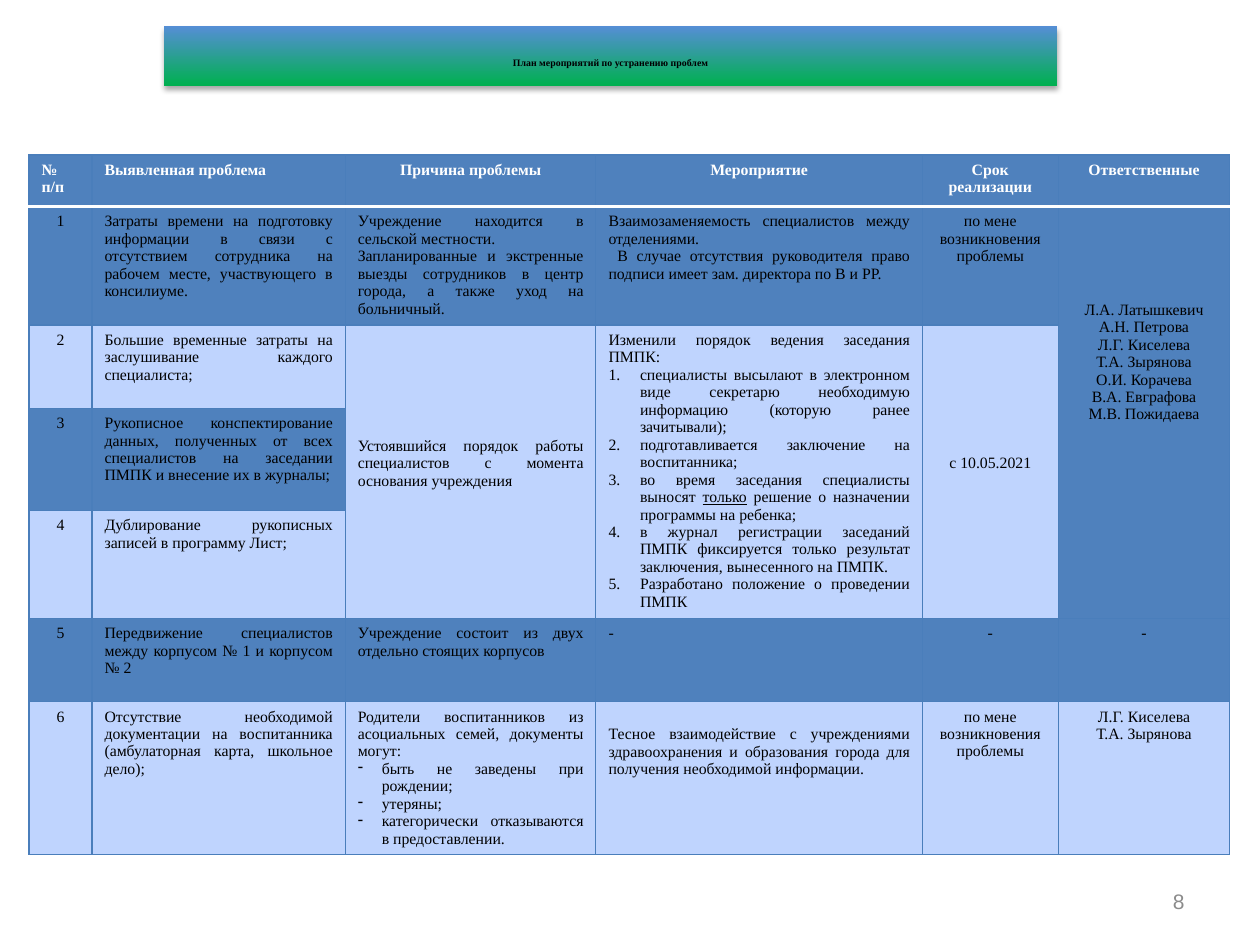
from lxml.etree import SubElement
from pptx import Presentation
from pptx.dml.color import RGBColor
from pptx.enum.text import MSO_ANCHOR, PP_ALIGN
from pptx.oxml import parse_xml
from pptx.oxml.ns import nsdecls, qn
from pptx.util import Inches, Pt

SERIF = "Times New Roman"
BLUE, PALE, GRID = "4F81BD", "BFD4FE", "4A7EBB"
LEFT, CENTER, JUSTIFY = PP_ALIGN.LEFT, PP_ALIGN.CENTER, PP_ALIGN.JUSTIFY
TITLE = "План мероприятий по устранению проблем"
PAGE = "8"

# "1. " and "- " open list items, "> " an indented line, underscores enclose underlined words;
# None continues the cell above.
ROWS = [
    ["№\nп/п", "Выявленная проблема", "Причина проблемы", "Мероприятие",
     "Срок реализации", "Ответственные"],
    ["1",
     "Затраты времени на подготовку информации в связи с отсутствием сотрудника "
     "на рабочем месте, участвующего в консилиуме.",
     "Учреждение находится в сельской местности.\n"
     "Запланированные и экстренные выезды сотрудников в центр города, а также уход на больничный.",
     "Взаимозаменяемость специалистов между отделениями.\n"
     "> В случае отсутствия руководителя право подписи имеет зам. директора по В и РР.",
     "по мене возникновения проблемы",
     "Л.А. Латышкевич\nА.Н. Петрова\nЛ.Г. Киселева\nТ.А. Зырянова\n"
     "О.И. Корачева\nВ.А. Евграфова\nМ.В. Пожидаева"],
    ["2", "Большие временные затраты на заслушивание каждого специалиста;",
     "Устоявшийся порядок работы специалистов с момента основания учреждения",
     "Изменили порядок ведения заседания ПМПК:\n"
     "1. специалисты высылают в электронном виде секретарю необходимую информацию "
     "(которую ранее зачитывали);\n"
     "1. подготавливается заключение на воспитанника;\n"
     "1. во время заседания специалисты выносят _только_ решение о назначении программы на ребенка;\n"
     "1. в журнал регистрации заседаний ПМПК фиксируется только результат заключения, "
     "вынесенного на ПМПК.\n"
     "1. Разработано положение о проведении ПМПК",
     "с 10.05.2021", None],
    ["3", "Рукописное конспектирование данных, полученных от всех специалистов на заседании "
     "ПМПК и внесение их в журналы;", None, None, None, None],
    ["4", "Дублирование рукописных записей в программу Лист;", None, None, None, None],
    ["5", "Передвижение специалистов между корпусом № 1 и корпусом № 2",
     "Учреждение состоит из двух отдельно стоящих корпусов", "-", "-", "-"],
    ["6", "Отсутствие необходимой документации на воспитанника (амбулаторная карта, школьное дело);",
     "Родители воспитанников из асоциальных семей, документы могут:\n"
     "- быть не заведены при рождении;\n- утеряны;\n- категорически отказываются в предоставлении.",
     "Тесное взаимодействие с учреждениями здравоохранения и образования города "
     "для получения необходимой информации.",
     "по мене возникновения проблемы", "Л.Г. Киселева\nТ.А. Зырянова"],
]
COLUMN_WIDTHS = [0.5, 2.01, 1.99, 2.59, 1.08, 1.36]
ROW_HEIGHTS = [0.41, 0.94, 0.66, 0.81, 0.86, 0.66, 1.21]
HEADER_ALIGN = [LEFT, LEFT, CENTER, CENTER, CENTER, CENTER]
BODY_ALIGN = [CENTER, JUSTIFY, JUSTIFY, JUSTIFY, CENTER, CENTER]
LOWERED_LINES = {(1, 5): 5, (2, 2): 6, (2, 4): 7, (6, 3): 1}  # lines left free above the text
LINE_HEIGHT = 0.14
# marker: (left margin, first-line indent, bullet element, bullet attributes)
LISTS = {
    "1. ": (0.25, -0.25, "a:buAutoNum", {"type": "arabicPeriod"}),
    "- ": (0.19, -0.19, "a:buChar", {"char": "-"}),
    "> ": (0, 0.07, "a:buNone", {}),
}


def rgb(color):
    return RGBColor.from_string(color)


def add_text(paragraph, text, size=9, font=SERIF, color="000000", bold=False, align=LEFT):
    """Fill a paragraph; words between underscores are underlined."""
    paragraph.alignment = align
    for index, part in enumerate(text.split("_")):
        run = paragraph.add_run()
        run.text = part
        run.font.size, run.font.name, run.font.bold = Pt(size), font, bold
        run.font.color.rgb = rgb(color)
        if index % 2:
            run.font.underline = True


def add_lines(frame, text, **style):
    """Write one paragraph per line, turning markers into lists and indents."""
    for index, line in enumerate(text.split("\n")):
        paragraph = frame.add_paragraph() if index else frame.paragraphs[0]
        for marker, (margin, indent, bullet, attributes) in LISTS.items():
            if line.startswith(marker):
                line = line[len(marker):]
                properties = paragraph._p.get_or_add_pPr()
                properties.set("marL", str(Inches(margin)))
                properties.set("indent", str(Inches(indent)))
                SubElement(properties, qn(bullet), attributes)
                break
        add_text(paragraph, line, **style)


def set_borders(cell, row):
    white_side = {0: "B", 1: "T"}.get(row)
    for side in "LRTB":
        color, width = ("FFFFFF", 1.98) if side == white_side else (GRID, 0.75)
        cell._tc.get_or_add_tcPr().append(parse_xml(
            f'<a:ln{side} {nsdecls("a")} w="{Pt(width)}"><a:solidFill>'
            f'<a:srgbClr val="{color}"/></a:solidFill></a:ln{side}>'))


def add_title(slide):
    title = slide.shapes.title
    title.left, title.top, title.width, title.height = map(Inches, (1.3, 0.21, 7.09, 0.47))
    title.fill.gradient()
    title.fill.gradient_angle = 90
    for stop, color in zip(title.fill.gradient_stops, ("00B050", "558ED5")):
        stop.color.rgb = rgb(color)
    title._element.spPr.append(parse_xml(
        f'<a:effectLst {nsdecls("a")}><a:outerShdw blurRad="{Pt(3.1)}" dist="{Pt(1.8)}" '
        'dir="5400000" rotWithShape="0"><a:srgbClr val="000000"><a:alpha val="35000"/>'
        '</a:srgbClr></a:outerShdw></a:effectLst>'))
    frame = title.text_frame
    frame.vertical_anchor = MSO_ANCHOR.MIDDLE
    frame.margin_top = Inches(0.15)
    add_text(frame.paragraphs[0], TITLE, size=5.6, bold=True, align=CENTER)


def add_plan(slide):
    table = slide.shapes.add_table(
        len(ROWS), len(COLUMN_WIDTHS), Inches(0.23), Inches(1.23),
        Inches(sum(COLUMN_WIDTHS)), Inches(sum(ROW_HEIGHTS))).table
    table.first_row = table.horz_banding = False
    for column, width in zip(table.columns, COLUMN_WIDTHS):
        column.width = Inches(width)
    for row, height in zip(table.rows, ROW_HEIGHTS):
        row.height = Inches(height)

    for c in range(len(COLUMN_WIDTHS)):
        for r, row in enumerate(ROWS):
            cell = table.cell(r, c)
            set_borders(cell, r)
            if row[c] is not None:
                start = r
            cell.fill.solid()
            cell.fill.fore_color.rgb = rgb(PALE if start and start % 2 == 0 else BLUE)
            if row[c] is None:
                continue
            cell.margin_top = Inches(0.05 + LOWERED_LINES.get((r, c), 0) * LINE_HEIGHT)
            add_lines(cell.text_frame, row[c], bold=r == 0,
                      color="000000" if r else "FFFFFF",
                      align=(BODY_ALIGN if r else HEADER_ALIGN)[c])
            end = r
            while end + 1 < len(ROWS) and ROWS[end + 1][c] is None:
                end += 1
            if end > r:
                cell.merge(table.cell(end, c))


def add_page_number(slide):
    frame = slide.shapes.add_textbox(*map(Inches, (7.17, 6.95, 2.33, 0.4))).text_frame
    frame.word_wrap = True
    frame.vertical_anchor = MSO_ANCHOR.MIDDLE
    add_text(frame.paragraphs[0], PAGE, size=12, font="Arial", color="8B8B8B",
             align=PP_ALIGN.RIGHT)


def main():
    deck = Presentation()
    deck.slide_width, deck.slide_height = Inches(10), Inches(7.5)
    slide = deck.slides.add_slide(deck.slide_layouts[5])
    add_title(slide)
    add_plan(slide)
    add_page_number(slide)
    deck.save("out.pptx")


if __name__ == "__main__":
    main()
